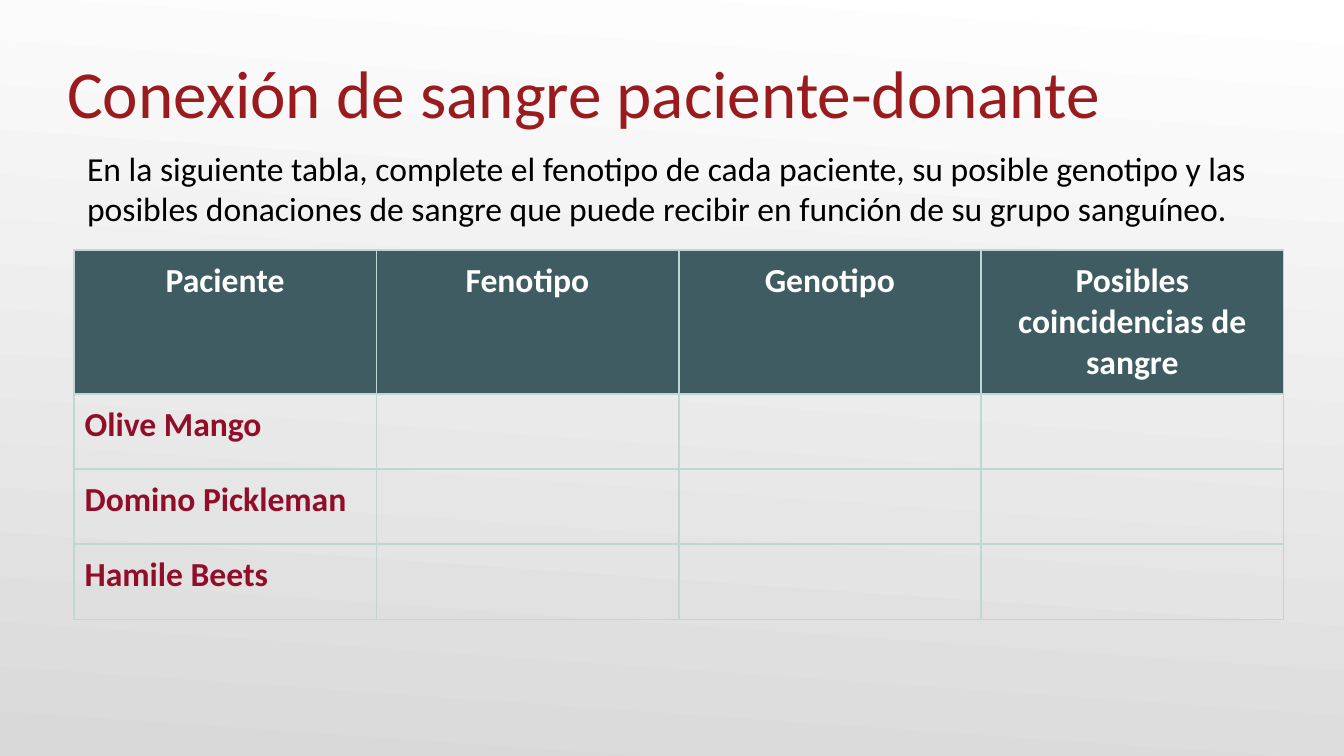
from lxml.etree import SubElement as Sub
from pptx import Presentation
from pptx.dml.color import RGBColor
from pptx.enum.text import MSO_ANCHOR as Anchor, PP_ALIGN as Align
from pptx.oxml.ns import qn
from pptx.util import Inches, Pt

WIDE = 10
HIGH = WIDE * 9 / 16
HEADS = ["Paciente", "Fenotipo", "Genotipo", "Posibles coincidencias de sangre"]
NAMES = ["Olive Mango", "Domino Pickleman", "Hamile Beets"]
TITLE = "Conexión de sangre paciente-donante"
INTRO = ("En la siguiente tabla, complete el fenotipo de cada paciente, "
         "su posible genotipo y las posibles donaciones de sangre que puede "
         "recibir en función de su grupo sanguíneo.")


def color(code):
    return RGBColor.from_string(code)


def share(left, top, width, height):
    return [Inches(part * size) for part, size in
            zip((left, top, width, height), (WIDE, HIGH, WIDE, HIGH))]


def style(para, size, code, bold=False):
    font = para.font
    font.name, font.size, font.bold = "Calibri", Pt(size), bold
    font.color.rgb = color(code)


def backdrop(slide):
    fill = slide.background.fill
    fill.gradient()
    fill.gradient_angle = 266
    for stop, code in zip(fill.gradient_stops, ("FFFFFF", "D9D9D9")):
        stop.color.rgb = color(code)


def label(slide, box, text, size, code, anchor=Anchor.TOP, side=0.1):
    frame = slide.shapes.add_textbox(*box).text_frame
    frame.word_wrap = True
    frame.vertical_anchor = anchor
    frame.margin_left = frame.margin_right = Inches(side)
    if anchor == Anchor.BOTTOM:
        frame.margin_bottom = 0
    para = frame.paragraphs[0]
    para.text = text
    style(para, size, code)


def border(cell, code):
    props = cell._tc.get_or_add_tcPr()
    for edge in ("a:lnL", "a:lnR", "a:lnT", "a:lnB"):
        line = Sub(props, qn(edge), w=str(Pt(1)))
        Sub(Sub(line, qn("a:solidFill")), qn("a:srgbClr"), val=code)


def roster(slide, box):
    rows = [HEADS] + [[name, "", "", ""] for name in NAMES]
    table = slide.shapes.add_table(len(rows), len(HEADS), *box).table
    table.horz_banding = False
    for col in table.columns:
        col.width = box[2] // len(HEADS)
    for index, row in enumerate(rows):
        head = index == 0
        table.rows[index].height = Inches(1.07 if head else 0.56)
        for cell, text in zip(table.rows[index].cells, row):
            cell.margin_left = cell.margin_right = Inches(0.08)
            cell.margin_top = cell.margin_bottom = Inches(0.08)
            border(cell, "BED7D3")
            if head:
                cell.fill.solid()
                cell.fill.fore_color.rgb = color("3E5C61")
            else:
                cell.fill.background()
            para = cell.text_frame.paragraphs[0]
            para.alignment = Align.CENTER if head else Align.LEFT
            if text:
                para.text = text
            style(para, 18, "FFFFFF" if head else "910D28", True)


def main():
    deck = Presentation()
    deck.slide_width, deck.slide_height = Inches(WIDE), Inches(HIGH)
    slide = deck.slides.add_slide(deck.slide_layouts[6])
    backdrop(slide)
    label(slide, share(0.05, 0.21 / HIGH, 0.9, 0.77 / HIGH), TITLE, 36,
          "991B1E", Anchor.BOTTOM, 0)
    roster(slide, share(0.055, 1.86 / HIGH, 0.9, 2.75 / HIGH))
    label(slide, share(0.055, 1.05 / HIGH, 0.9, 0.71 / HIGH), INTRO, 18, "000000")
    deck.save("out.pptx")


if __name__ == "__main__":
    main()
